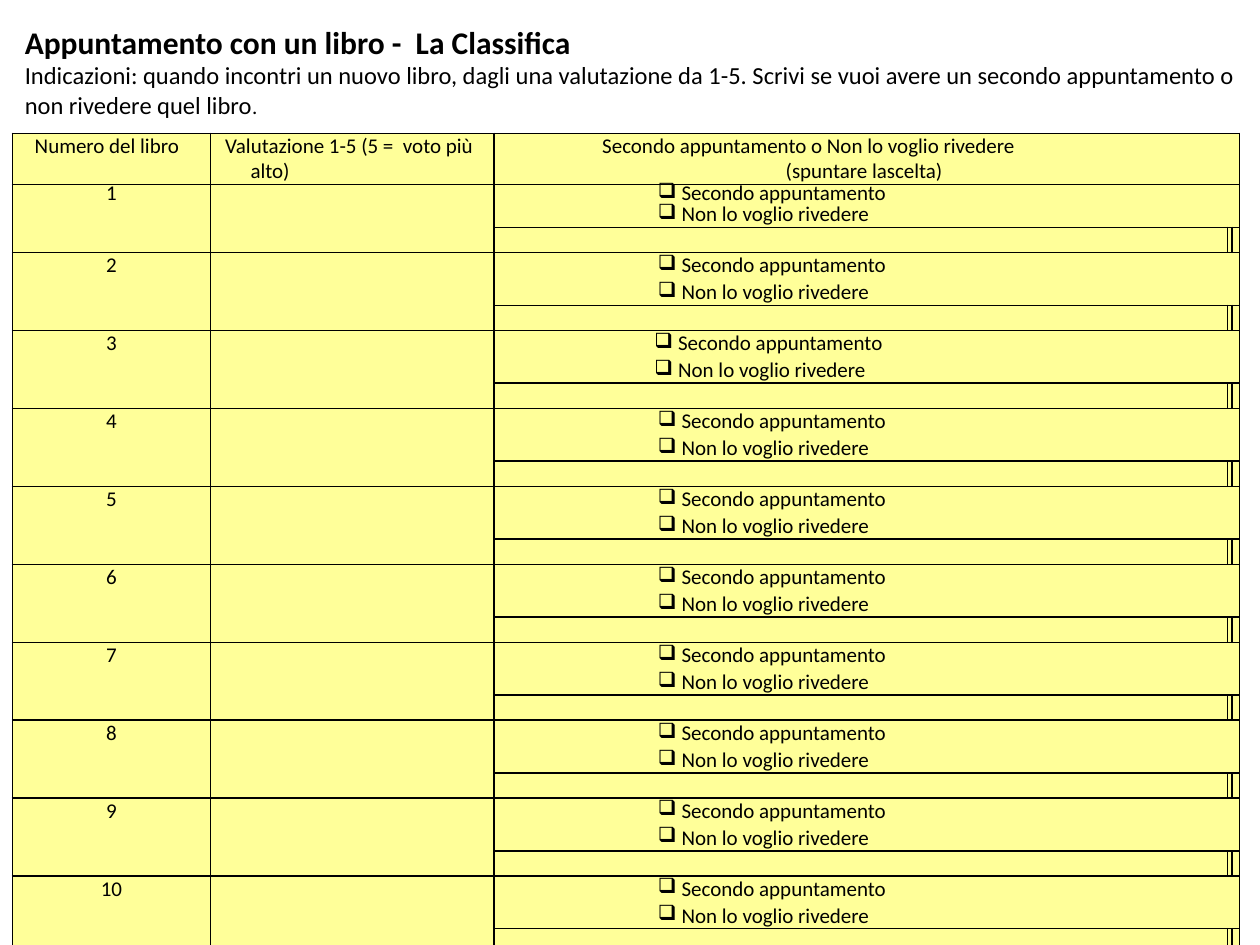
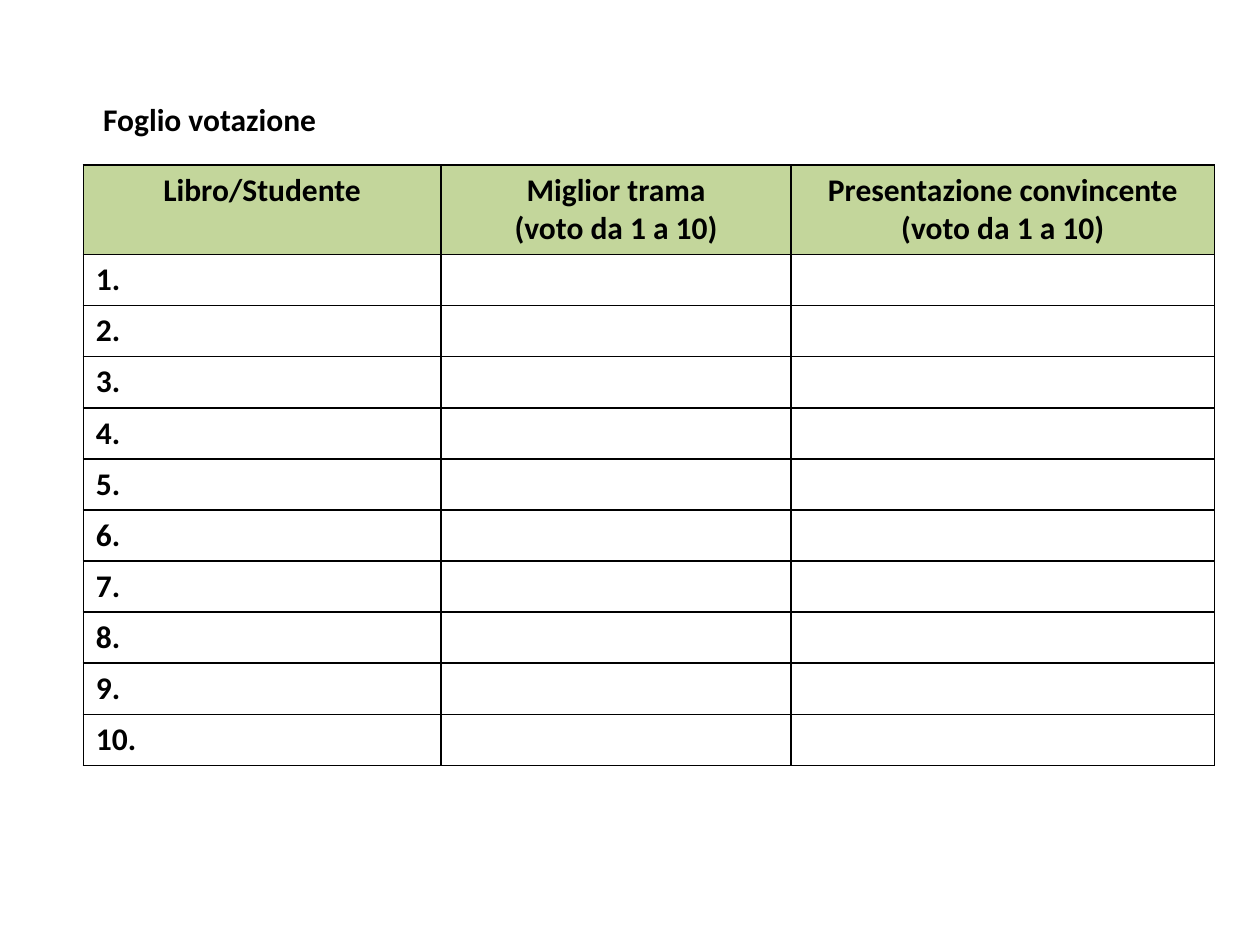
from pptx import Presentation, util as u
from pptx.dml.color import RGBColor
from pptx.enum import text
from pptx.oxml import parse_xml
from pptx.oxml.ns import nsdecls

YELLOW, GREEN, BLACK = "FFFF99", "C3D69B", "000000"
PLAIN_STYLE = "{2D5ABB26-0587-4C30-8999-92F81FD0307C}"
BOOKS = range(1, 11)
colour = RGBColor.from_string
CENTRE = text.PP_ALIGN.CENTER


def write(frame, lines, paragraph_format=None, **font_format):
    """Fill a frame with lines and return its paragraphs."""
    for number, line in enumerate(lines):
        para = frame.add_paragraph() if number else frame.paragraphs[0]
        span = para.add_run()
        span.text = line
        span.font.color.rgb = colour(BLACK)
        for name, value in {"name": "Calibri", **font_format}.items():
            setattr(span.font, name, value)
        for name, value in (paragraph_format or {}).items():
            setattr(para, name, value)
    return frame.paragraphs


def add_grid(page, left, top, widths, heights, empty_size):
    """Add an unfilled table with black 1 pt borders, lengths in cm."""
    grid = page.shapes.add_table(
        len(heights), len(widths), u.Cm(left), u.Cm(top),
        u.Cm(sum(widths)), u.Cm(sum(heights))).table
    grid.first_row = grid.horz_banding = False
    grid._tbl.tblPr[0].text = PLAIN_STYLE
    for column, width in zip(grid.columns, widths):
        column.width = u.Cm(width)
    for row, height in zip(grid.rows, heights):
        row.height = u.Cm(height)
    for cell in grid.iter_cells():
        properties = cell._tc.get_or_add_tcPr()
        for side in "LRTB":
            properties.append(parse_xml(
                f'<a:ln{side} {nsdecls("a")} w="12700"><a:solidFill>'
                f'<a:srgbClr val="{BLACK}"/></a:solidFill></a:ln{side}>'))
        cell.fill.background()
        cell.text_frame.paragraphs[0]._p.append(parse_xml(
            f'<a:endParaRPr {nsdecls("a")} sz="{empty_size * 100}"/>'))
    return grid


deck = Presentation()
deck.slide_width, deck.slide_height = u.Cm(25.4), u.Cm(19.05)
blank = deck.slide_layouts[6]

# Book ranking
page = deck.slides.add_slide(blank)
ranking = add_grid(page, 0.25, 2.69, [3.99, 5.72, 14.78, 0.08, 0.15],
                   [1.02, 0.86, 0.51] + [1.04, 0.51] * 9, 10)
for cell in ranking.iter_cells():
    cell.fill.solid()
    cell.fill.fore_color.rgb = colour(YELLOW)
    for side in ("left", "right", "top", "bottom"):
        setattr(cell, f"margin_{side}", 0)

ranking.cell(0, 2).merge(ranking.cell(0, 4))
headings = [
    (["Numero del libro"], 0.2, 0.25),
    (["Valutazione 1-5 (5 =  voto più alto)"], 0.81, -0.51),
    (["Secondo appuntamento o Non lo voglio rivedere", "(spuntare lascelta)"], 5.33, -3.15),
]
for column, (lines, margin, indent) in enumerate(headings):
    for para in write(ranking.cell(0, column).text_frame, lines, size=u.Pt(12)):
        layout = para._p.get_or_add_pPr()
        layout.set("marL", str(u.Cm(margin)))
        layout.set("indent", str(u.Cm(indent)))
para.alignment = CENTRE
layout.set("marR", str(u.Cm(2.29)))

for book in BOOKS:
    top = 2 * book - 1
    for column in (0, 1):
        ranking.cell(top, column).merge(ranking.cell(top + 1, column))
    ranking.cell(top, 2).merge(ranking.cell(top, 4))
    spacing = {"line_spacing": u.Pt(12.1)} if book == 1 else {"space_before": u.Pt(0.8)}
    write(ranking.cell(top, 0).text_frame, [str(book)],
          {"alignment": CENTRE, **spacing}, size=u.Pt(12))
    choices = write(ranking.cell(top, 2).text_frame,
                    ["Secondo appuntamento", "Non lo voglio rivedere"],
                    spacing, size=u.Pt(12))
    for para in choices:
        layout = para._p.get_or_add_pPr()
        layout.set("marL", str(u.Cm(3.71 if book == 3 else 3.78)))
        layout.set("indent", str(u.Cm(-0.48)))
        layout.append(parse_xml(f'<a:buChar {nsdecls("a")} char="❑"/>'))

box = page.shapes.add_textbox(u.Cm(0.25), u.Cm(0.33), u.Cm(25.4), u.Cm(2.24))
box.text_frame.word_wrap = True
write(box.text_frame, ["Appuntamento con un libro -  La Classifica"], size=u.Pt(18), bold=True)
para = box.text_frame.add_paragraph()
directions = ("Indicazioni: quando incontri un nuovo libro, dagli una valutazione da 1-5. "
              "Scrivi se vuoi avere un secondo appuntamento o non rivedere quel libro")
for words, size in ((directions, 14), (".", 12)):
    span = para.add_run()
    span.text = words
    span.font.name, span.font.size = "Calibri", u.Pt(size)
    span.font.color.rgb = colour(BLACK)

# Voting sheet
page = deck.slides.add_slide(blank)
heading_font = {"size": u.Pt(18), "bold": True}
votes = add_grid(page, 1.68, 3.33, [7.21, 7.06, 8.53], [1.8] + [1.03] * 10, 18)
headings = [
    ["Libro/Studente"],
    ["Miglior trama", "(voto da 1 a 10)"],
    ["Presentazione convincente", "(voto da 1 a 10)"],
]
for column, lines in enumerate(headings):
    cell = votes.cell(0, column)
    cell.fill.solid()
    cell.fill.fore_color.rgb = colour(GREEN)
    write(cell.text_frame, lines, {"alignment": CENTRE}, **heading_font)
for book in BOOKS:
    write(votes.cell(book, 0).text_frame, [f"{book}."], **heading_font)

box = page.shapes.add_textbox(u.Cm(1.83), u.Cm(1.9), u.Cm(4.93), u.Cm(1.02))
box.text_frame.word_wrap = True
write(box.text_frame, ["Foglio votazione"], **heading_font)

deck.save("out.pptx")
